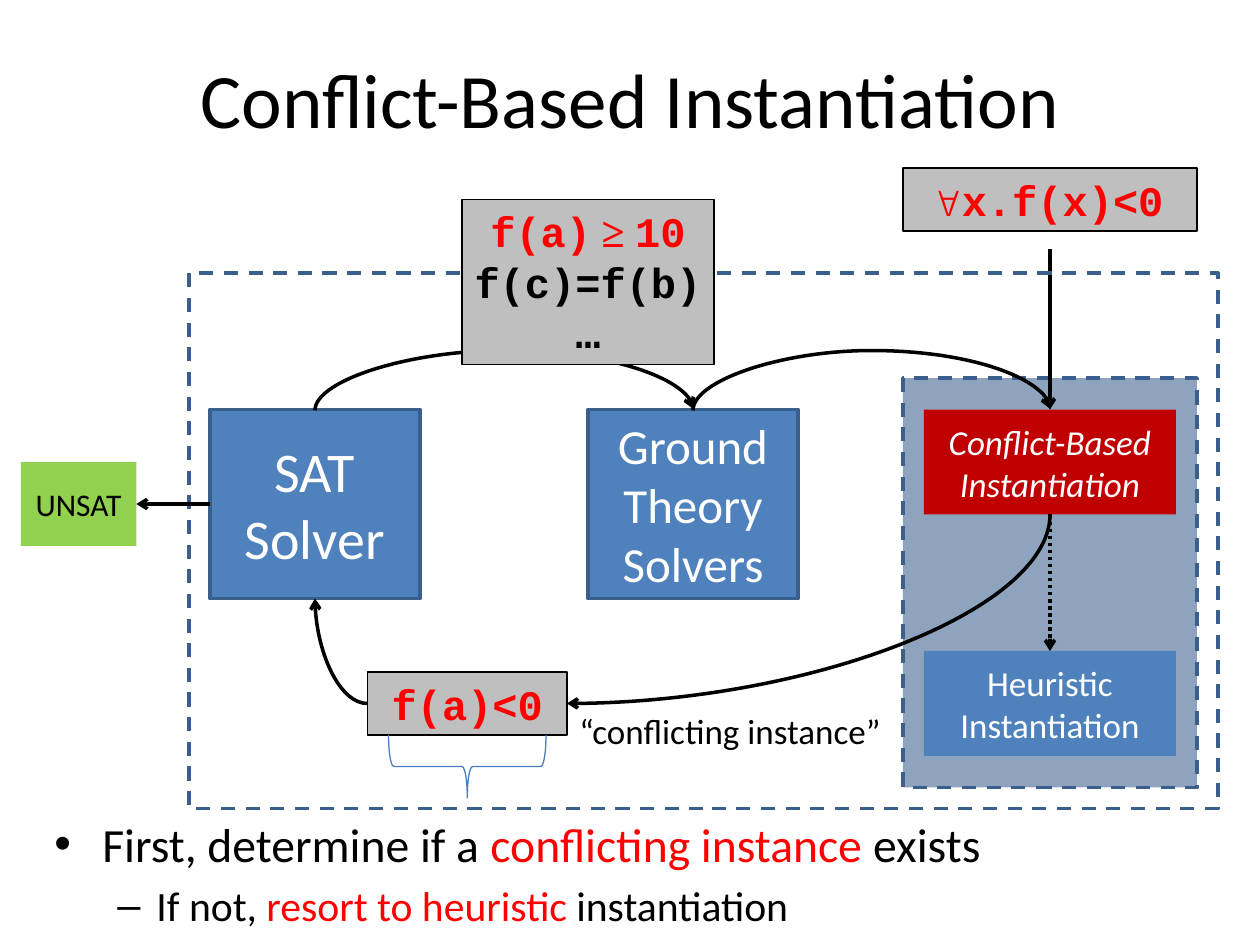
from lxml import etree
from pptx import Presentation
from pptx import util as u
from pptx.dml.color import RGBColor
from pptx.enum import dml, shapes, text
from pptx.oxml import ns

CELL = u.Inches(1 / 12)
BLUE, NAVY, GREY, RED = "4F81BD", "3A5F8C", "BFBFBF", "FF0000"
BLACK, WHITE = "000000", "FFFFFF"
RECT = shapes.MSO_SHAPE.RECTANGLE
DASH = dml.MSO_LINE.DASH


def grid(*cells):
    return [u.Emu(round(c * CELL)) for c in cells]


def color(value):
    return RGBColor.from_string(value)


def sub(parent, tag, **attrs):
    return etree.SubElement(parent, ns.qn(tag), attrs)


def add_run(p, content, size, fill, font="Calibri", bold=False, italic=False):
    r = p.add_run()
    r.text = content
    r.font.size, r.font.name = u.Pt(size), font
    r.font.bold, r.font.italic = bold, italic
    r.font.color.rgb = color(fill)


def next_paragraph(tf, index, align=text.PP_ALIGN.CENTER):
    p = tf.add_paragraph() if index else tf.paragraphs[0]
    p.alignment = align
    return p


def outline(sp, line, width, dash=None):
    if line:
        sp.line.color.rgb = color(line)
        sp.line.width = u.Pt(width)
        if dash:
            sp.line.dash_style = dash
    else:
        sp.line.fill.background()


def add_box(s, cells, fill=None, line=None, width=2, dash=None, kind=RECT):
    sp = s.shapes.add_shape(kind, *grid(*cells))
    sp.shadow.inherit = False
    if fill:
        sp.fill.solid()
        sp.fill.fore_color.rgb = color(fill)
    else:
        sp.fill.background()
    outline(sp, line, width, dash)
    return sp


def add_label(s, cells, fill, lines, size, ink=WHITE, line=None, italic=False):
    tf = add_box(s, cells, fill, line).text_frame
    tf.vertical_anchor = text.MSO_ANCHOR.MIDDLE
    for i, content in enumerate(lines):
        add_run(next_paragraph(tf, i), content, size, ink, italic=italic)


def add_formula(s, cells, lines):
    tf = add_box(s, cells, GREY, BLACK, 0.75).text_frame
    tf.vertical_anchor = text.MSO_ANCHOR.TOP
    tf.auto_size = text.MSO_AUTO_SIZE.SHAPE_TO_FIT_TEXT
    for i, runs in enumerate(lines):
        p = next_paragraph(tf, i)
        for content, ink, font in runs:
            add_run(p, content, 24, ink, font, bold=True)


def add_arrow(s, start, end, kind=shapes.MSO_CONNECTOR.STRAIGHT, dash=None):
    c = s.shapes.add_connector(kind, *grid(*start, *end))
    outline(c, BLACK, 2, dash)
    sub(c.line._get_or_add_ln(), "a:tailEnd", type="arrow")
    sub(c._element.spPr, "a:effectLst")
    return c


def add_curve(s, start, end, turn, bulge=None):
    c = add_arrow(s, start, end, shapes.MSO_CONNECTOR.CURVE)
    (x1, y1), (x2, y2) = grid(*start), grid(*end)
    w, h = max(abs(x2 - x1), u.Pt(1)), max(abs(y2 - y1), u.Pt(1))
    if turn % 180:
        w, h = h, w
    geom = c._element.spPr.find(ns.qn("a:prstGeom"))
    if bulge:
        guides = geom.find(ns.qn("a:avLst"))
        ratio = round(bulge * CELL / w * 100000)
        sub(guides, "a:gd", name="adj1", fmla=f"val {ratio}")
    else:
        geom.set("prst", "curvedConnector2")
    c.left, c.top = (x1 + x2 - w) // 2, (y1 + y2 - h) // 2
    c.width, c.height = w, h
    xfrm = c._element.spPr.find(ns.qn("a:xfrm"))
    for flip in ("flipH", "flipV"):
        xfrm.attrib.pop(flip, None)
    xfrm.set("rot", str(turn * 60000))


def add_text(s, cells, wrap=True):
    tf = s.shapes.add_textbox(*grid(*cells)).text_frame
    tf.word_wrap = wrap
    return tf


def add_bullets(s, cells, items):
    tf = add_text(s, cells)
    for i, (mark, size, margin, hang, runs) in enumerate(items):
        p = next_paragraph(tf, i, text.PP_ALIGN.LEFT)
        p.level = i
        p.space_before = u.Pt(0.2 * size if i else 0)
        pPr = p._p.get_or_add_pPr()
        pPr.set("marL", str(u.Inches(margin)))
        pPr.set("indent", str(-u.Inches(hang)))
        sub(pPr, "a:buFont", typeface="Arial")
        sub(pPr, "a:buChar", char=mark)
        for content, ink in runs:
            add_run(p, content, size, ink)


def add_title(s, cells, content):
    title = s.shapes.title
    title.left, title.top, title.width, title.height = grid(*cells)
    tf = title.text_frame
    tf.vertical_anchor = text.MSO_ANCHOR.MIDDLE
    add_run(next_paragraph(tf, 0), content, 44, BLACK)


def main():
    prs = Presentation()
    prs.slide_width, prs.slide_height = grid(120, 90)
    s = prs.slides.add_slide(prs.slide_layouts[5])
    mono, serif = "Courier New", "Times New Roman"

    panel = add_box(s, (86, 36, 28, 39), "1F497D", NAVY, dash=DASH)
    tint = panel._element.spPr.find(ns.qn("a:solidFill"))[0]
    sub(tint, "a:alpha", val="50000")
    add_title(s, (6, 3.6, 108, 11.4), "Conflict-Based Instantiation")

    add_label(s, (20, 39, 20, 18), BLUE, ["SAT Solver"], 32, line=NAVY)
    add_label(s, (56, 39, 20, 18), BLUE, ["Ground", "Theory Solvers"], 28, line=NAVY)
    add_label(s, (88, 39, 24, 10), "C00000", ["Conflict-Based", "Instantiation"], 20,
              italic=True)
    add_arrow(s, (100, 23.7), (100, 39))
    add_box(s, (18, 26, 98, 51), line=NAVY, dash=DASH)
    add_curve(s, (30, 39), (66, 39), 270, bulge=5.75)
    add_label(s, (2, 44, 11, 8), "92D050", ["UNSAT"], 18, BLACK)
    add_arrow(s, (20, 48), (13, 48))
    add_curve(s, (100, 49), (54, 67), 90)
    add_formula(s, (35, 64, 19, 6), [[("f(a)<0", RED, mono)]])
    add_curve(s, (66, 39), (100, 39), 270, bulge=5.75)
    add_curve(s, (35, 67), (30, 57), 180)
    brace = add_box(s, (41.5, 65.5, 6, 15), line="4B7EBC", width=0.75,
                    kind=shapes.MSO_SHAPE.RIGHT_BRACE)
    brace.rotation = 90
    add_label(s, (88, 62, 24, 10), BLUE, ["Heuristic", "Instantiation"], 20)
    add_arrow(s, (100, 49), (100, 62), dash=dml.MSO_LINE.ROUND_DOT)
    add_formula(s, (86, 16, 28, 6), [[("∀x.f(x)<0", RED, mono)]])
    add_formula(s, (44, 19, 24, 15.7), [
        [("f(a)", RED, mono), (" ≥ ", RED, serif), ("10", RED, mono)],
        [("f(c)=f(b)", BLACK, mono)],
        [("…", BLACK, mono)],
    ])

    caption = add_text(s, (54, 67, 31.4, 5.3), wrap=False)
    add_run(caption.paragraphs[0], "“conflicting instance”", 20, BLACK)
    add_bullets(s, (4, 77, 110, 11), [
        ("•", 27.2, 0.38, 0.38, [("First, determine if a ", BLACK),
                                 ("conflicting instance ", RED), ("exists", BLACK)]),
        ("–", 23.8, 0.81, 0.31, [("If not, ", BLACK), ("resort to heuristic ", RED),
                                 ("instantiation", BLACK)]),
    ])
    prs.save("out.pptx")


if __name__ == "__main__":
    main()
